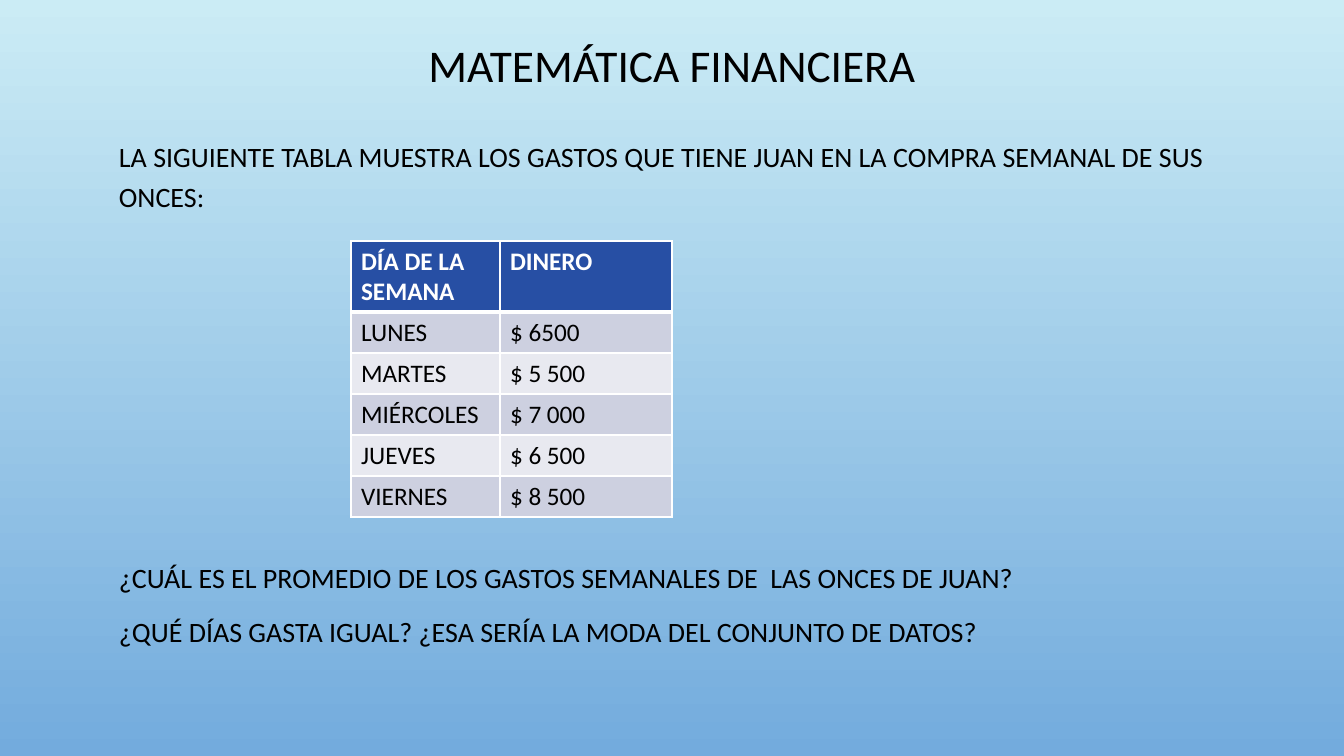
"""Build the slide on Juan's weekly snack spending."""
from lxml.etree import SubElement
from pptx import Presentation
from pptx.dml.color import RGBColor
from pptx.enum.text import MSO_ANCHOR, MSO_AUTO_SIZE, PP_ALIGN
from pptx.oxml.ns import qn
from pptx.util import Pt

TITLE = "MATEMÁTICA FINANCIERA"
BODY = [
    ("LA SIGUIENTE TABLA MUESTRA LOS GASTOS QUE TIENE JUAN EN LA COMPRA SEMANAL DE SUS ONCES:", 0),
    ("¿CUÁL ES EL PROMEDIO DE LOS GASTOS SEMANALES DE  LAS ONCES DE JUAN?", 243),
    ("¿QUÉ DÍAS GASTA IGUAL? ¿ESA SERÍA LA MODA DEL CONJUNTO DE DATOS?", 10),
]
EXPENSES = [
    ("DÍA DE LA SEMANA", "DINERO"),
    ("LUNES", "$ 6500"),
    ("MARTES", "$ 5 500"),
    ("MIÉRCOLES", "$ 7 000"),
    ("JUEVES", "$ 6 500"),
    ("VIERNES", "$ 8 500"),
]
SLIDE_SIZE = (1344, 756)
TITLE_BOX = (101, 43, 1142, 49)
BODY_BOX = (109, 128, 1142, 586)
TABLE_ORIGIN = (351, 241)
COLUMN_WIDTHS = (149, 172)
HEADER_HEIGHT, ROW_HEIGHT = 71, 41
BACKGROUND = ("CBECF5", "73ABDD")
HEADER_FILL, BANDS = "274FA4", ("CDD0E0", "E8E9F0")
BLACK, WHITE = "000000", "FFFFFF"
FONT = "Calibri"


def px(length):
    """Turn pixels into EMU."""
    return round(length * 914400 / 100.8)


def color(value):
    """Turn a hex string into a colour."""
    return RGBColor.from_string(value)


def add_text(paragraph, text, size, text_color, bold=False):
    """Add one formatted run to a paragraph."""
    run = paragraph.add_run()
    run.text = text
    run.font.name = FONT
    run.font.size = Pt(size)
    run.font.bold = bold
    run.font.color.rgb = color(text_color)


def add_borders(cell, top, bottom):
    """Draw white borders around a cell, with widths in points."""
    properties = cell._tc.get_or_add_tcPr()
    sides = (("a:lnL", 1), ("a:lnR", 1), ("a:lnT", top), ("a:lnB", bottom))
    for side, width in sides:
        line = SubElement(properties, qn(side), w=str(Pt(width)))
        fill = SubElement(line, qn("a:solidFill"))
        SubElement(fill, qn("a:srgbClr"), val=WHITE)


def paint_background(slide):
    """Fill the slide with a gradient from top to bottom."""
    fill = slide.background.fill
    fill.gradient()
    fill.gradient_angle = 270
    for stop, value, position in zip(fill.gradient_stops, BACKGROUND, (0, 1)):
        stop.color.rgb = color(value)
        stop.position = position


def add_title(slide):
    """Place and format the title."""
    title = slide.shapes.title
    title.left, title.top, title.width, title.height = map(px, TITLE_BOX)
    frame = title.text_frame
    frame.auto_size = MSO_AUTO_SIZE.NONE
    frame.vertical_anchor = MSO_ANCHOR.MIDDLE
    paragraph = frame.paragraphs[0]
    paragraph.alignment = PP_ALIGN.CENTER
    paragraph.line_spacing = 0.9
    add_text(paragraph, TITLE, 32.4, BLACK)


def add_body(slide):
    """Write the statement and the questions, leaving room for the table."""
    frame = slide.shapes.add_textbox(*map(px, BODY_BOX)).text_frame
    frame.word_wrap = True
    for index, (text, space_before) in enumerate(BODY):
        paragraph = frame.add_paragraph() if index else frame.paragraphs[0]
        paragraph.line_spacing = 1.2
        paragraph.space_before = Pt(space_before)
        add_text(paragraph, text, 20, BLACK)


def add_expenses(slide):
    """Build the table of daily expenses."""
    heights = [HEADER_HEIGHT] + [ROW_HEIGHT] * (len(EXPENSES) - 1)
    size = (sum(COLUMN_WIDTHS), sum(heights))
    table = slide.shapes.add_table(
        len(EXPENSES), len(COLUMN_WIDTHS), *map(px, TABLE_ORIGIN + size)
    ).table
    for column, width in zip(table.columns, COLUMN_WIDTHS):
        column.width = px(width)
    for row_index, values in enumerate(EXPENSES):
        header = row_index == 0
        table.rows[row_index].height = px(heights[row_index])
        for column_index, text in enumerate(values):
            cell = table.cell(row_index, column_index)
            add_borders(cell, 3 if row_index == 1 else 1, 3 if header else 1)
            cell.fill.solid()
            cell.fill.fore_color.rgb = color(HEADER_FILL if header else BANDS[(row_index - 1) % 2])
            add_text(cell.text_frame.paragraphs[0], text, 18, WHITE if header else BLACK, header)


def main():
    """Create the presentation and save it."""
    presentation = Presentation()
    presentation.slide_width, presentation.slide_height = map(px, SLIDE_SIZE)
    slide = presentation.slides.add_slide(presentation.slide_layouts.get_by_name("Title Only"))
    paint_background(slide)
    add_title(slide)
    add_body(slide)
    add_expenses(slide)
    presentation.save("out.pptx")


if __name__ == "__main__":
    main()
